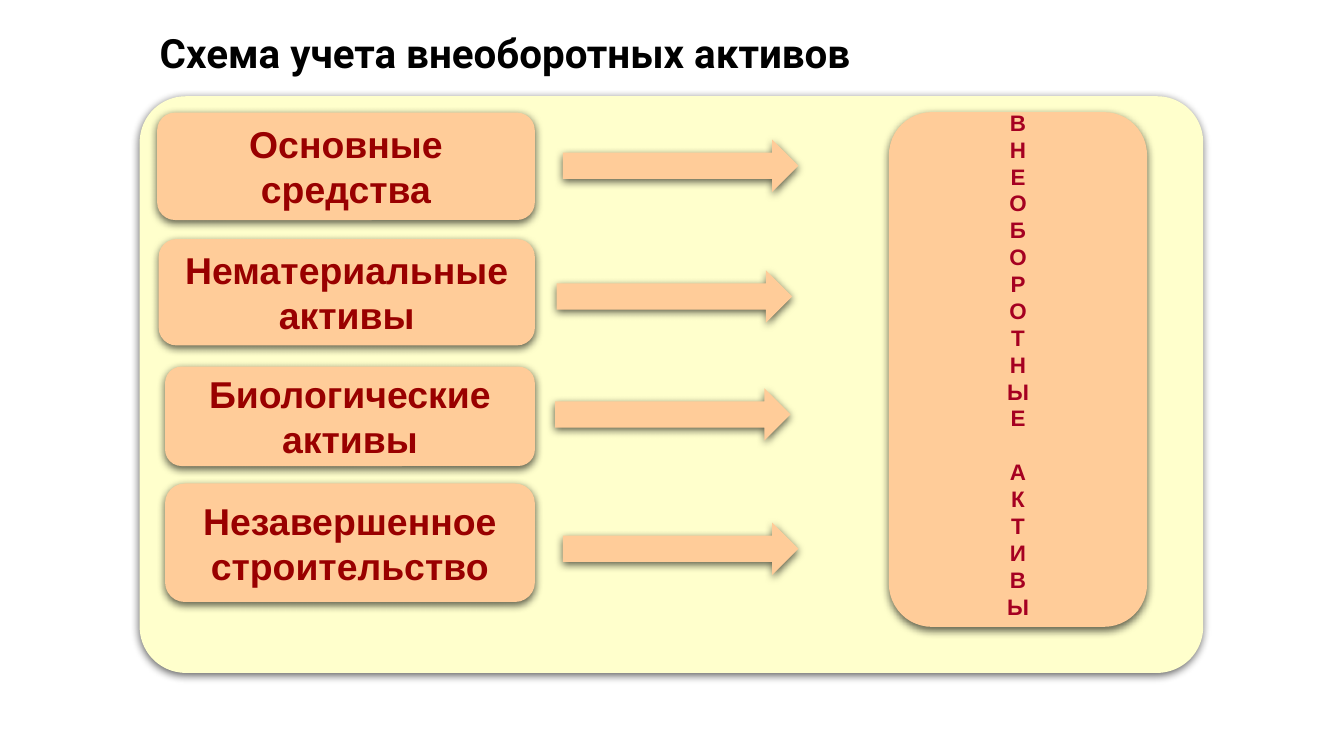
from dataclasses import dataclass

from pptx import Presentation
from pptx.dml.color import RGBColor
from pptx.enum.shapes import MSO_SHAPE as Kind
from pptx.enum.text import MSO_ANCHOR as Anchor, PP_ALIGN as Align
from pptx.oxml import parse_xml
from pptx.oxml.ns import nsdecls, qn
from pptx.util import Cm, Pt

SAND, CREAM = "FFCC99", "FFFFCC"
SHADOW = (
    f'<a:outerShdw {nsdecls("a")} blurRad="57150" dist="19050" dir="5400000"'
    ' algn="ctr" rotWithShape="0">'
    '<a:srgbClr val="000000"><a:alpha val="63000"/></a:srgbClr></a:outerShdw>'
)


@dataclass
class Box:
    left: float
    top: float
    width: float
    height: float

    def lengths(self) -> list:
        return [Cm(n) for n in (self.left, self.top, self.width, self.height)]


@dataclass
class Row:
    text: str
    box: Box
    arrow: tuple[float, float]


@dataclass
class Style:
    size: float
    color: str
    font: str = "Arial"
    align: Align = Align.CENTER
    spacing: float = 1.0


ROWS = [
    Row("Основные\nсредства", Box(2.97, 2.13, 7.14, 2.03), (10.64, 2.64)),
    Row("Нематериальные\nактивы", Box(3, 4.52, 7.11, 2.01), (10.52, 5.11)),
    Row("Биологические\nактивы", Box(3.12, 6.93, 6.99, 1.88), (10.49, 7.34)),
    Row("Незавершенное\nстроительство", Box(3.12, 9.14, 6.99, 2.24), (10.64, 9.88)),
]
LABEL = Style(20, "990000")
LETTER = Style(12, "A50021")
TITLE = Style(21.6, "000000", "Roboto", Align.LEFT, 0.9)


def rgb(code: str) -> RGBColor:
    return RGBColor.from_string(code)


def add_shape(slide, kind: Kind, box: Box, fill: str):
    """Add a borderless shape with a soft shadow below it."""
    shape = slide.shapes.add_shape(kind, *box.lengths())
    shape.fill.solid()
    shape.fill.fore_color.rgb = rgb(fill)
    shape.line.fill.background()
    shape.shadow.inherit = False
    shape._element.spPr.find(qn("a:effectLst")).append(parse_xml(SHADOW))
    return shape


def write(shape, lines: list[str], style: Style, **extra) -> None:
    frame = shape.text_frame
    look = {"word_wrap": False, "vertical_anchor": Anchor.MIDDLE} | extra
    for name, value in look.items():
        setattr(frame, name, value)
    for i, line in enumerate(lines):
        par = frame.paragraphs[0] if i == 0 else frame.add_paragraph()
        par.alignment, par.line_spacing = style.align, style.spacing
        run = par.add_run()
        run.text = line
        font = {"name": style.font, "size": Pt(style.size), "bold": True}
        for name, value in font.items():
            setattr(run.font, name, value)
        run.font.color.rgb = rgb(style.color)


def main() -> None:
    deck = Presentation()
    deck.slide_width, deck.slide_height = Cm(25.4), Cm(14.29)
    slide = deck.slides.add_slide(deck.slide_layouts[6])

    title = slide.shapes.add_textbox(*Box(2.77, 0.51, 20.45, 1.19).lengths())
    write(title, ["Схема учета внеоборотных активов"], TITLE,
          word_wrap=True, vertical_anchor=Anchor.TOP)

    panel = add_shape(slide, Kind.ROUNDED_RECTANGLE, Box(2.64, 1.82, 20.1, 10.9), CREAM)
    panel.adjustments[0] = 0.08

    total = add_shape(slide, Kind.ROUNDED_RECTANGLE, Box(16.8, 2.12, 4.88, 9.73), SAND)
    first, second = "ВНЕОБОРОТНЫЕ", "АКТИВЫ"
    write(total, list(first + second), LETTER, margin_top=0, margin_bottom=Cm(0.2))
    total.text_frame.paragraphs[len(first)].space_before = Pt(14.4)

    for row in ROWS:
        card = add_shape(slide, Kind.ROUNDED_RECTANGLE, row.box, SAND)
        write(card, row.text.split("\n"), LABEL)
        add_shape(slide, Kind.RIGHT_ARROW, Box(*row.arrow, 4.45, 0.99), SAND)

    deck.save("out.pptx")


if __name__ == "__main__":
    main()
